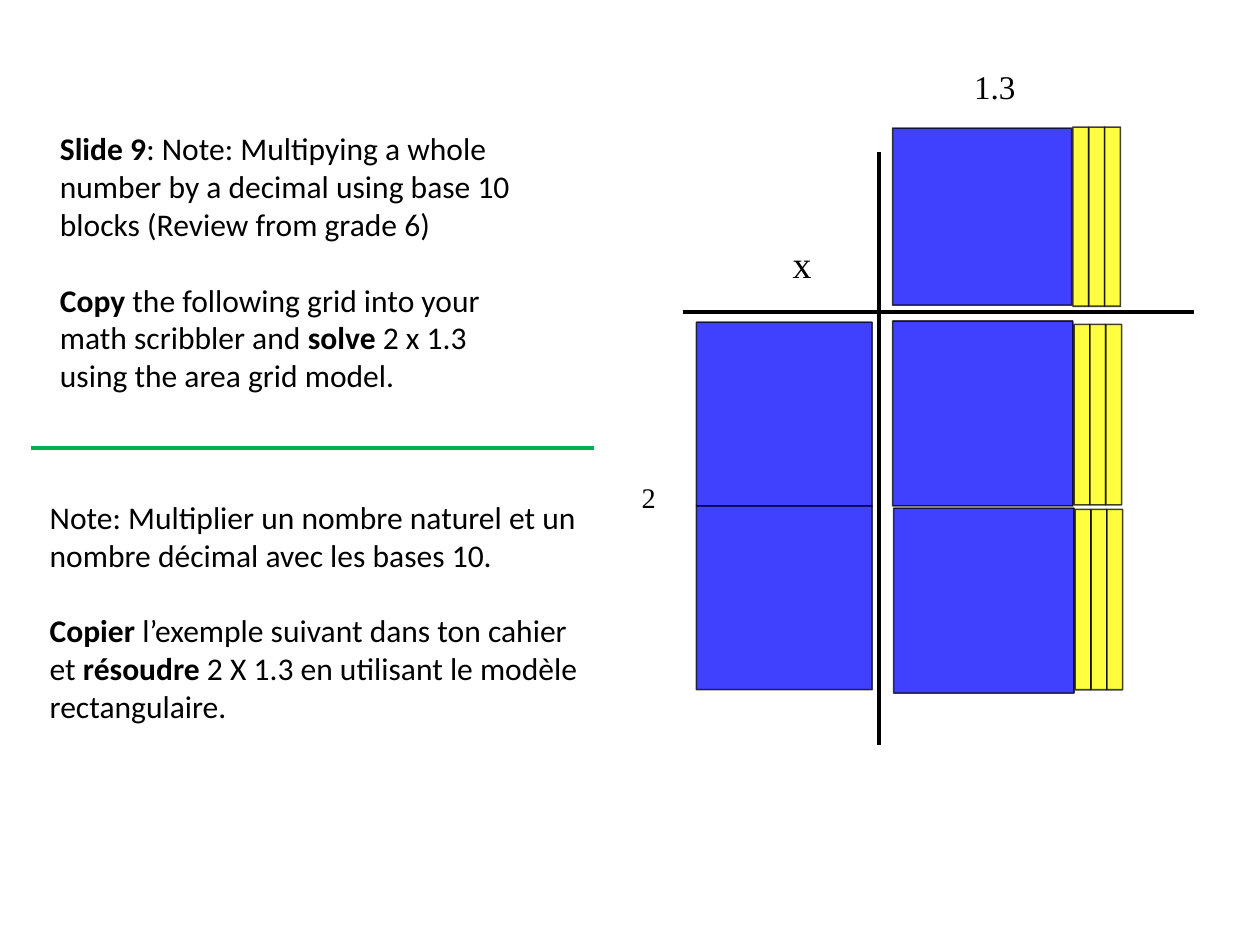
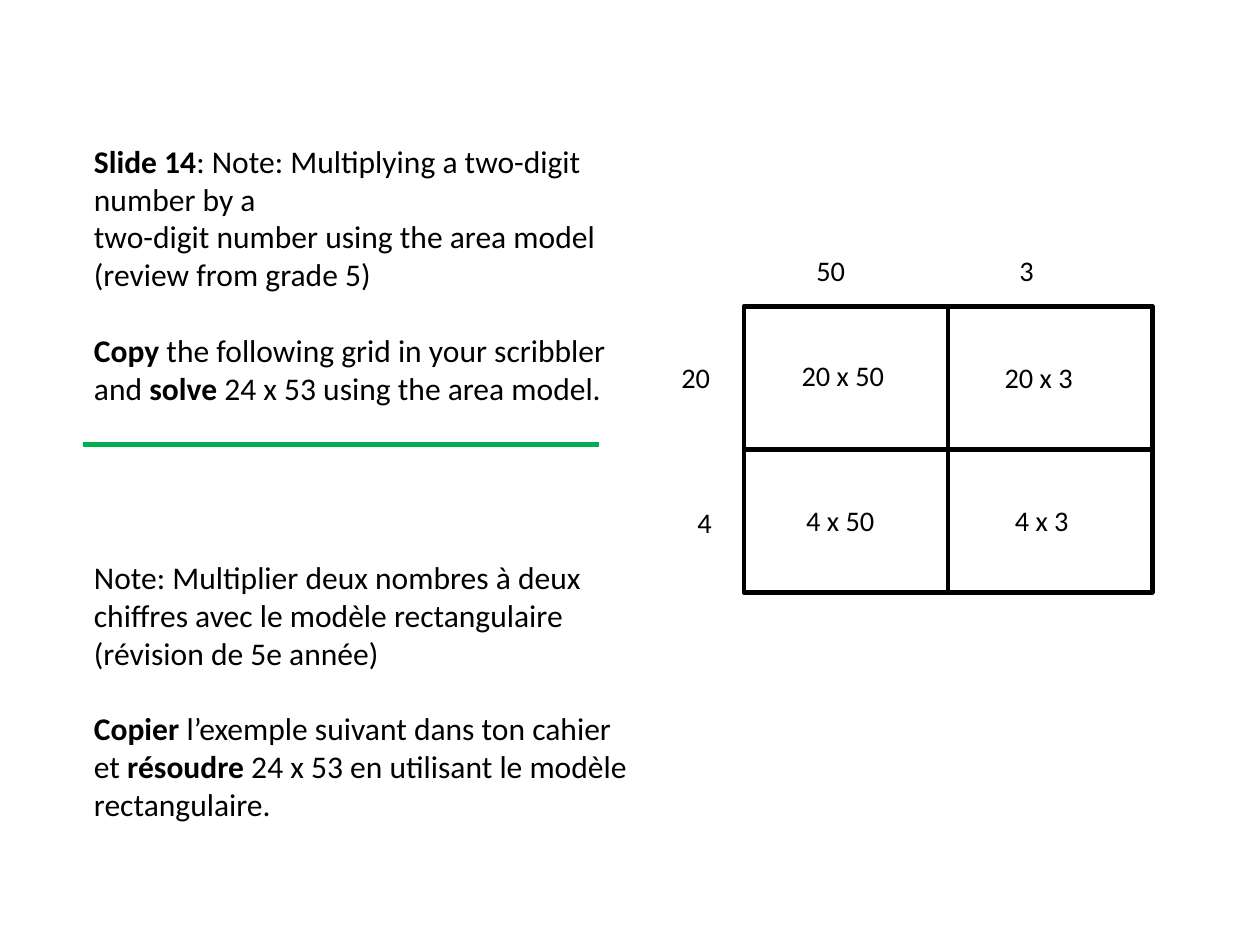
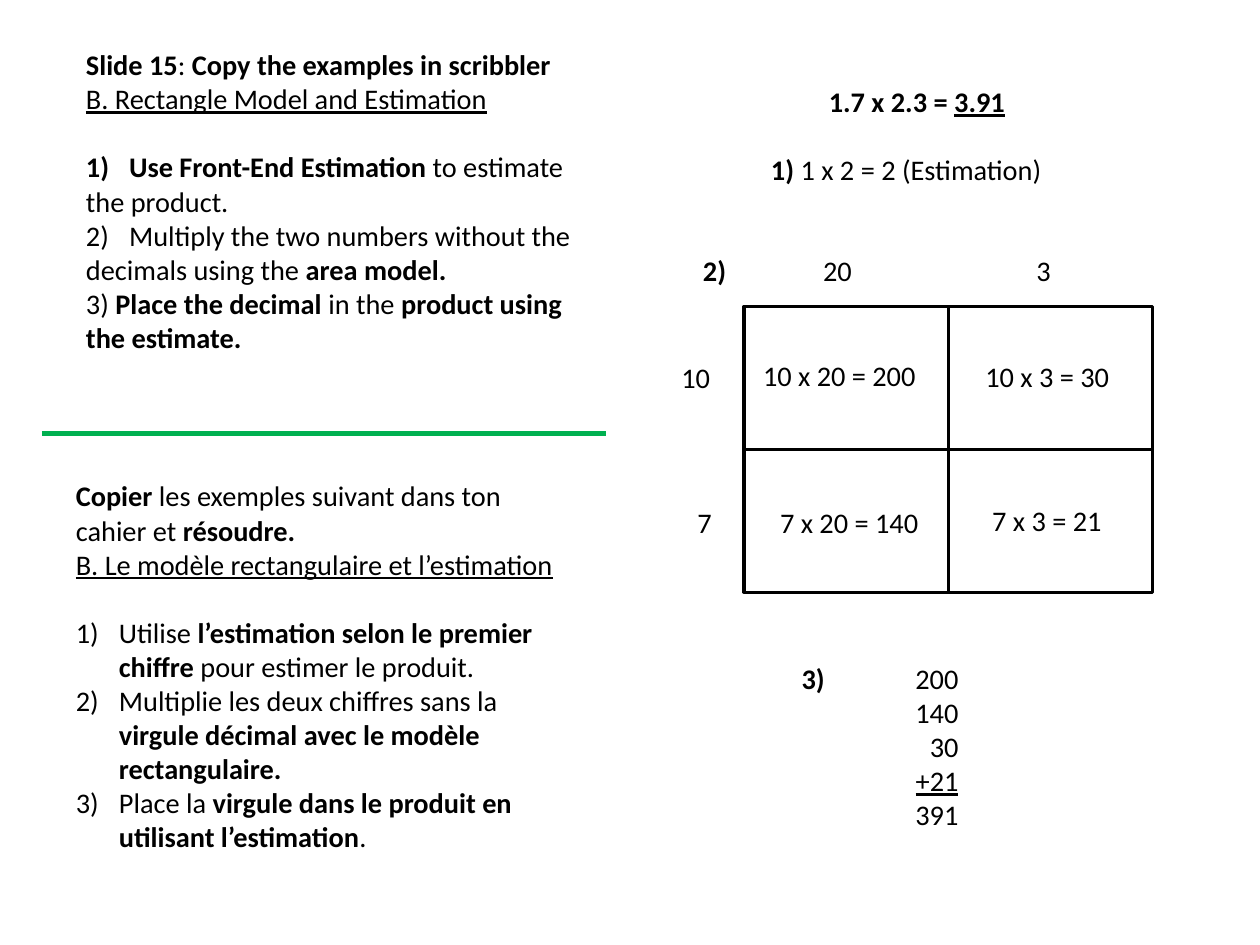
from dataclasses import dataclass

from lxml import etree
from pptx import Presentation
from pptx.dml.color import RGBColor
from pptx.enum.shapes import MSO_CONNECTOR, MSO_SHAPE
from pptx.enum.text import PP_ALIGN
from pptx.oxml.ns import qn
from pptx.util import Inches, Pt

RECTANGLE = MSO_SHAPE.RECTANGLE
STRAIGHT = MSO_CONNECTOR.STRAIGHT
LEFT, RIGHT = PP_ALIGN.LEFT, PP_ALIGN.RIGHT
TOP_SIDE, LEFT_SIDE, BOTTOM_SIDE, RIGHT_SIDE = range(4)
BOLD = {"bold": True}
UNDERLINE = {"underline": True}


@dataclass(frozen=True)
class Theme:
    black: RGBColor = RGBColor(0x00, 0x00, 0x00)
    divider: RGBColor = RGBColor(0x00, 0xB0, 0x50)
    unit: RGBColor = RGBColor(0x00, 0x00, 0xFF)
    tenth: RGBColor = RGBColor(0xFF, 0xFF, 0x00)
    font: str = "Calibri"
    math_font: str = "Times New Roman"
    note_size: int = 20
    body_size: int = 18
    line_ratio: float = 1.2
    heavy_line: int = 3
    grid_line: int = 2
    block_line: int = 1
    block_opacity: int = 75000
    list_indent: float = 0.38


THEME = Theme()


@dataclass(frozen=True)
class Para:
    """Runs are plain strings or (string, format) pairs; number starts a list item."""
    runs: tuple
    gap: bool = False
    number: int = 0
    indent: float = 0


def para(*runs, **options):
    return Para(runs, **options)


def apply_format(target, values):
    for name, value in values.items():
        setattr(target, name, value)


def number_paragraph(paragraph, start):
    properties = paragraph._p.get_or_add_pPr()
    hanging = Inches(THEME.list_indent)
    properties.set("marL", str(hanging))
    properties.set("indent", str(-hanging))
    numbering = etree.SubElement(properties, qn("a:buAutoNum"), type="arabicParenR")
    if start > 1:
        numbering.set("startAt", str(start))


def add_text(slide, box, paras, size=THEME.body_size, font=THEME.font, align=LEFT):
    frame = slide.shapes.add_textbox(*map(Inches, box)).text_frame
    frame.word_wrap = True
    for index, content in enumerate(paras):
        paragraph = frame.paragraphs[0] if index == 0 else frame.add_paragraph()
        paragraph.alignment = align
        if content.gap:
            paragraph.space_before = Pt(size * THEME.line_ratio)
        if content.indent:
            paragraph._p.get_or_add_pPr().set("marL", str(Inches(content.indent)))
        if content.number:
            number_paragraph(paragraph, content.number)
        for item in content.runs:
            text, emphasis = (item, {}) if isinstance(item, str) else item
            run = paragraph.add_run()
            run.text = text
            apply_format(run.font, {"name": font, "size": Pt(size), **emphasis})
            run.font.color.rgb = THEME.black


def add_label(slide, text, left, top, width=1.8, emphasis=None, **style):
    add_text(slide, (left, top, width, 0.4), [para((text, emphasis or {}))], **style)


def add_line(slide, start, end, color=THEME.black, width=THEME.heavy_line):
    line = slide.shapes.add_connector(STRAIGHT, *map(Inches, (*start, *end)))
    line.line.color.rgb = color
    line.line.width = Pt(width)
    etree.SubElement(line._element.spPr, qn("a:effectLst"))
    return line


def add_divider(slide, left, right, top):
    add_line(slide, (left, top), (right, top), THEME.divider)


def add_box(slide, box, line_width):
    shape = slide.shapes.add_shape(RECTANGLE, *map(Inches, box))
    shape.shadow.inherit = False
    shape.fill.background()
    shape.line.color.rgb = THEME.black
    shape.line.width = Pt(line_width)
    return shape


def add_block(slide, box, color):
    """Draw a translucent base-ten block."""
    block = add_box(slide, box, THEME.block_line)
    block.fill.solid()
    block.fill.fore_color.rgb = color
    for shade in block._element.spPr.iter(qn("a:srgbClr")):
        etree.SubElement(shade, qn("a:alpha"), val=str(THEME.block_opacity))


def add_tenths(slide, left, top, height, count=3, width=0.14):
    for index in range(count):
        add_block(slide, (left + index * width, top, width, height), THEME.tenth)


def add_area_grid(slide, line_width, rows, columns, products):
    """Draw the two-by-two grid; columns and products are (text, left, top)."""
    left, top, width, height = 6.56, 2.7, 3.6, 2.52
    outline = add_box(slide, (left, top, width, height), line_width)
    middle_x, middle_y = left + width / 2, top + height / 2
    splits = [
        ((left, middle_y), (left + width, middle_y), LEFT_SIDE, RIGHT_SIDE),
        ((middle_x, top), (middle_x, top + height), TOP_SIDE, BOTTOM_SIDE),
    ]
    for start, end, start_side, end_side in splits:
        split = add_line(slide, start, end, width=line_width)
        split.begin_connect(outline, start_side)
        split.end_connect(outline, end_side)
    for text, (row_left, row_top) in zip(rows, [(5.91, 3.13), (6.05, 4.4)]):
        add_label(slide, text, row_left, row_top, width=0.54)
    for text, label_left, label_top in columns + products:
        add_label(slide, text, label_left, label_top)


def build_decimal_blocks(slide):
    add_text(slide, (0.43, 1.09, 4.44, 2.46), [
        para(("Slide 9", BOLD), ": Note: Multipying a whole number by a decimal "
             "using base 10 blocks (Review from grade 6)"),
        para(("Copy", BOLD), " the following grid into your math scribbler and ",
             ("solve", BOLD), " 2 x 1.3 using the area grid model.", gap=True),
    ], THEME.note_size)
    add_divider(slide, 0.27, 5.24, 3.95)
    add_text(slide, (0.34, 4.34, 5.56, 2.12), [
        para("Note: Multiplier un nombre naturel et un nombre décimal "
             "avec les bases 10."),
        para(("Copier ", BOLD), "l’exemple suivant dans ton cahier", gap=True),
        para("et ", ("résoudre", BOLD),
             " 2 X 1.3 en utilisant le modèle rectangulaire."),
    ], THEME.note_size)

    add_line(slide, (6.02, 2.75), (10.53, 2.75))
    add_line(slide, (7.75, 1.34), (7.75, 6.57))
    for text, left, top, size in [("x", 6.89, 2.07, 24), ("1.3", 8.49, 0.54, 21),
                                  ("2", 5.56, 4.18, 18)]:
        add_label(slide, text, left, top, 0.97, size=size, font=THEME.math_font)

    units = [(7.87, 1.13, 1.58, 1.56),
             (6.14, 2.84, 1.55, 1.62), (6.14, 4.46, 1.55, 1.62),
             (7.87, 2.83, 1.59, 1.63), (7.88, 4.48, 1.59, 1.63)]
    for unit in units:
        add_block(slide, unit, THEME.unit)
    for left, top, height in [(9.46, 1.12, 1.58), (9.47, 2.86, 1.59),
                              (9.48, 4.49, 1.59)]:
        add_tenths(slide, left, top, height)


def build_two_digit_product(slide):
    add_text(slide, (0.73, 1.2, 5.09, 2.5), [
        para(("Slide 14", BOLD), ": Note: Multiplying a two-digit number by a"),
        para("two-digit number using the area model"),
        para("(review from grade 5)"),
        para(("Copy", BOLD), " the following grid in your scribbler", gap=True),
        para("and ", ("solve", BOLD), " 24 x 53 using the area model."),
    ], THEME.note_size)
    add_divider(slide, 0.73, 5.28, 3.92)
    add_text(slide, (0.73, 4.87, 5.09, 2.5), [
        para("Note: Multiplier deux nombres à deux"),
        para("chiffres avec le modèle rectangulaire"),
        para("(révision de 5e année)"),
        para(("Copier ", BOLD), "l’exemple suivant dans ton cahier", gap=True),
        para("et ", ("résoudre", BOLD), " 24 x 53 en utilisant le modèle"),
        para("rectangulaire."),
    ], THEME.note_size)
    add_area_grid(
        slide, THEME.heavy_line, ["20", "4"],
        [("50", 7.1, 2.18), ("3", 8.89, 2.18)],
        [("20 x 50", 6.97, 3.11), ("20 x 3", 8.76, 3.13),
         ("4 x 50", 7.01, 4.39), ("4 x 3", 8.85, 4.39)])


def build_estimation(slide):
    add_text(slide, (0.66, 0.37, 4.9, 2.83), [
        para(("Slide 15", BOLD), ": ", ("Copy the examples in scribbler", BOLD)),
        para(("B. Rectangle Model and Estimation", UNDERLINE)),
        para(("Use Front-End Estimation ", BOLD), "to estimate", gap=True, number=1),
        para("the product."),
        para("Multiply the two numbers without the", number=2),
        para("decimals using the ", ("area model.", BOLD)),
        para("3) ", ("Place the decimal ", BOLD), "in the ",
             ("product using", BOLD)),
        para(("the estimate.", BOLD)),
    ])
    add_divider(slide, 0.37, 5.34, 3.82)
    add_text(slide, (0.57, 4.17, 4.55, 3.43), [
        para(("Copier", BOLD), " les exemples suivant dans ton cahier et ",
             ("résoudre.", BOLD)),
        para(("B. Le modèle rectangulaire et l’estimation", UNDERLINE)),
        para("Utilise ", ("l’estimation selon le premier chiffre", BOLD),
             " pour estimer le produit.", gap=True, number=1),
        para("Multiplie les deux chiffres sans la ",
             ("virgule décimal avec le modèle rectangulaire.", BOLD), number=1),
        para("Place la ",
             ("virgule dans le produit en utilisant l’estimation", BOLD), ".",
             number=1),
    ])

    add_text(slide, (6.7, 0.69, 3.6, 1.01), [
        para(("1.7 x 2.3 = ", BOLD), ("3.91", BOLD | UNDERLINE), indent=0.51),
        para(("1) ", BOLD), "1 x 2 = 2 (Estimation)", gap=True),
    ])
    add_label(slide, "2)", 6.1, 2.18, 0.6, BOLD)
    add_area_grid(
        slide, THEME.grid_line, ["10", "7"],
        [("20", 7.16, 2.18), ("3", 9.04, 2.18)],
        [("10 x 20 = 200", 6.63, 3.11), ("10 x 3 = 30", 8.59, 3.12),
         ("7 x 20 = 140", 6.78, 4.4), ("7 x 3 = 21", 8.65, 4.39)])
    add_label(slide, "3)", 6.97, 5.78, 0.6, BOLD)
    add_text(slide, (7.75, 5.78, 0.8, 1.62), [
        para("200"), para("140"), para("30"), para(("+21", UNDERLINE)), para("391"),
    ], align=RIGHT)


def main():
    deck = Presentation()
    deck.slide_width, deck.slide_height = Inches(11.11), Inches(8.33)
    blank = deck.slide_layouts[6]
    for build in (build_decimal_blocks, build_two_digit_product, build_estimation):
        build(deck.slides.add_slide(blank))
    deck.save("out.pptx")


if __name__ == "__main__":
    main()
